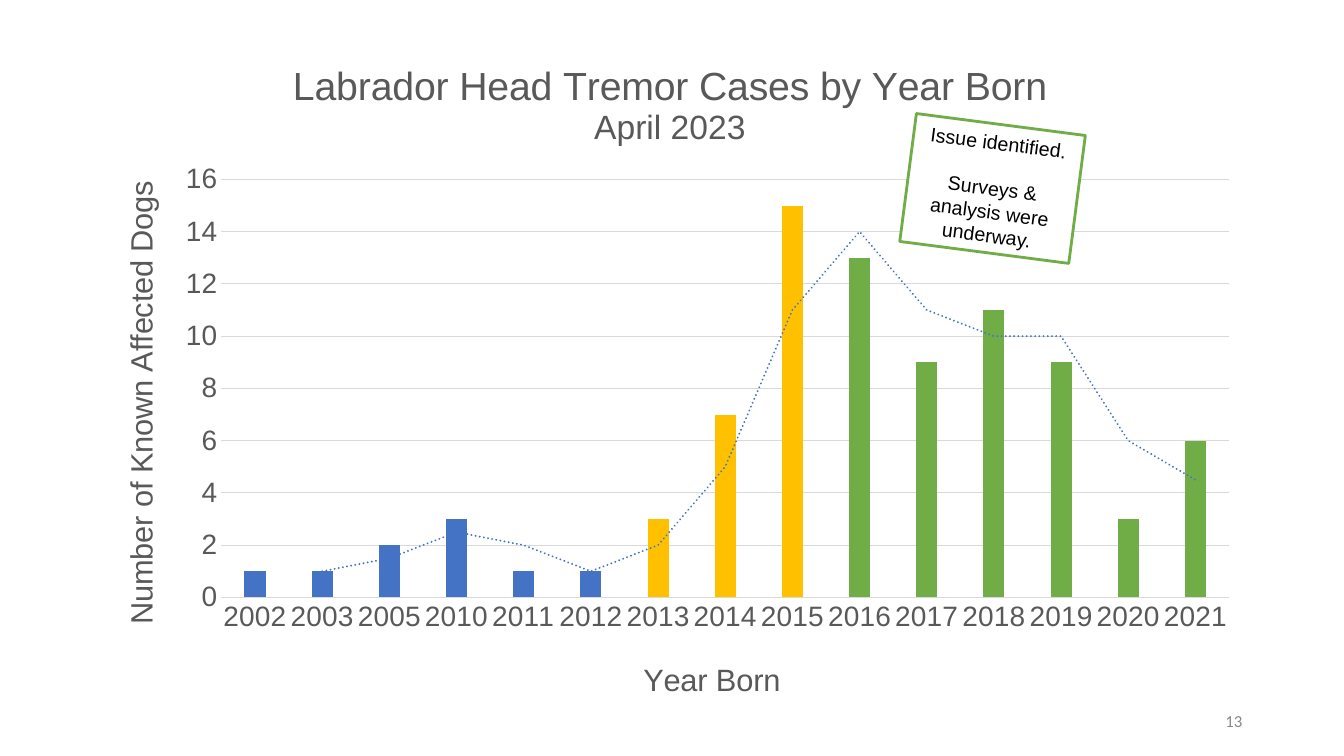
from pptx import Presentation
from pptx.chart.data import CategoryChartData
from pptx.dml.color import RGBColor
from pptx.enum.chart import XL_CHART_TYPE, XL_TICK_MARK
from pptx.enum.shapes import MSO_SHAPE
from pptx.enum.text import MSO_ANCHOR, PP_ALIGN
from pptx.oxml import parse_xml
from pptx.oxml.ns import nsdecls, qn
from pptx.util import Inches, Pt

COLUMNS = XL_CHART_TYPE.COLUMN_CLUSTERED
NO_TICK = XL_TICK_MARK.NONE
RECTANGLE = MSO_SHAPE.RECTANGLE
MIDDLE = MSO_ANCHOR.MIDDLE
CENTER, RIGHT = PP_ALIGN.CENTER, PP_ALIGN.RIGHT

BLUE, GOLD, GREEN = "4472C4", "FFC000", "70AD47"
GREY, PALE, BLACK, WHITE = "595959", "D9D9D9", "000000", "FFFFFF"

CASES = {
    "2002": 1, "2003": 1, "2005": 2, "2010": 3, "2011": 1,
    "2012": 1, "2013": 3, "2014": 7, "2015": 15, "2016": 13,
    "2017": 9, "2018": 11, "2019": 9, "2020": 3, "2021": 6,
}
# Text and size in points of each line
CHART_TITLE = [("Labrador Head Tremor Cases by Year Born", 28), ("April 2023", 24)]
YEAR_TITLE = [("Year Born", 22)]
DOGS_TITLE = [("Number of Known Affected Dogs", 22)]
CALLOUT = [("Issue identified.", 14), ("Surveys & analysis were underway.", 14)]
PAGE_NUMBER = [("13", 12)]


def rgb(value):
    return RGBColor.from_string(value)


def write(frame, lines, color, font="Arial", align=CENTER, gap=0):
    """Fill a text frame, one paragraph a line, with a gap in points between them."""
    for index, (text, size) in enumerate(lines):
        para = frame.paragraphs[0] if index == 0 else frame.add_paragraph()
        para.alignment = align
        if index and gap:
            para.space_before = Pt(gap)
        span = para.add_run()
        span.text = text
        span.font.name = font
        span.font.size = Pt(size)
        span.font.bold = False
        span.font.color.rgb = rgb(color)


def place(element, x, y, width=None, height=None):
    """Fix a chart part at fractions of the chart area."""
    for old in element.findall(qn("c:layout")):
        element.remove(old)
    target = '<c:layoutTarget val="inner"/>' if width else ""
    size = f'<c:w val="{width}"/><c:h val="{height}"/>' if width else ""
    layout = parse_xml(
        f'<c:layout {nsdecls("c")}><c:manualLayout>{target}'
        f'<c:xMode val="edge"/><c:yMode val="edge"/>'
        f'<c:x val="{x}"/><c:y val="{y}"/>{size}</c:manualLayout></c:layout>')
    text = element.find(qn("c:tx"))
    element.insert(0 if text is None else element.index(text) + 1, layout)


def add_title(title, lines, x, y):
    write(title.text_frame, lines, GREY)
    place(title._element, x, y)


def style_axis(axis):
    axis.major_tick_mark = axis.minor_tick_mark = NO_TICK
    font = axis.tick_labels.font
    font.name, font.size = "Arial", Pt(20)
    font.color.rgb = rgb(GREY)


def style_line(line, color, width):
    line.color.rgb = rgb(color)
    line.width = Pt(width)


def add_moving_average(series):
    trend = parse_xml(
        f'<c:trendline {nsdecls("c", "a")}><c:spPr><a:ln w="19050" cap="rnd">'
        f'<a:solidFill><a:srgbClr val="{BLUE}"/></a:solidFill>'
        '<a:prstDash val="sysDot"/></a:ln></c:spPr>'
        '<c:trendlineType val="movingAvg"/><c:period val="2"/>'
        '<c:dispRSqr val="0"/><c:dispEq val="0"/></c:trendline>')
    series._element.find(qn("c:cat")).addprevious(trend)


def add_cases_chart(page):
    data = CategoryChartData()
    data.categories = list(CASES)
    data.add_series("Series 1", list(CASES.values()))
    chart = page.shapes.add_chart(
        COLUMNS, Inches(0.92), Inches(0.4), Inches(11.5), Inches(6.7), data).chart
    chart.has_legend = False
    chart.font.name, chart.font.size = "Arial", Pt(10)

    years, dogs = chart.category_axis, chart.value_axis
    style_axis(years)
    style_axis(dogs)
    style_line(years.format.line, PALE, 0.75)
    dogs.format.line.fill.background()
    style_line(dogs.major_gridlines.format.line, PALE, 0.75)
    dogs.minimum_scale, dogs.maximum_scale, dogs.major_unit = 0, 16, 2

    add_title(chart.chart_title, CHART_TITLE, 0.17, 0.03)
    add_title(years.axis_title, YEAR_TITLE, 0.47, 0.91)
    add_title(dogs.axis_title, DOGS_TITLE, 0.02, 0.2)
    place(chart._chartSpace.find(".//" + qn("c:plotArea")), 0.111, 0.206, 0.869, 0.619)

    plot = chart.plots[0]
    plot.vary_by_categories = False
    plot.gap_width, plot.overlap = 219, -27
    series = plot.series[0]
    series.invert_if_negative = False
    series.format.fill.solid()
    series.format.fill.fore_color.rgb = rgb(BLUE)
    for index, year in enumerate(CASES):
        if year >= "2013":
            fill = series.points[index].format.fill
            fill.solid()
            fill.fore_color.rgb = rgb(GOLD if year <= "2015" else GREEN)
    add_moving_average(series)


def add_callout(page):
    box = page.shapes.add_shape(
        RECTANGLE, Inches(9), Inches(1.23), Inches(1.69), Inches(1.28))
    box.rotation = 7.4
    box.shadow.inherit = False
    box.fill.solid()
    box.fill.fore_color.rgb = rgb(WHITE)
    style_line(box.line, GREEN, 2)
    box.text_frame.word_wrap = True
    box.text_frame.vertical_anchor = MIDDLE
    write(box.text_frame, CALLOUT, BLACK, gap=16)


def add_page_number(page):
    box = page.shapes.add_textbox(Inches(9.42), Inches(6.95), Inches(3), Inches(0.4))
    box.text_frame.word_wrap = True
    box.text_frame.vertical_anchor = MIDDLE
    write(box.text_frame, PAGE_NUMBER, "888888", "Calibri", RIGHT)


def main():
    deck = Presentation()
    deck.slide_width, deck.slide_height = Inches(13.33), Inches(7.5)
    page = deck.slides.add_slide(deck.slide_layouts[6])
    add_cases_chart(page)
    add_callout(page)
    add_page_number(page)
    deck.save("out.pptx")


if __name__ == "__main__":
    main()
